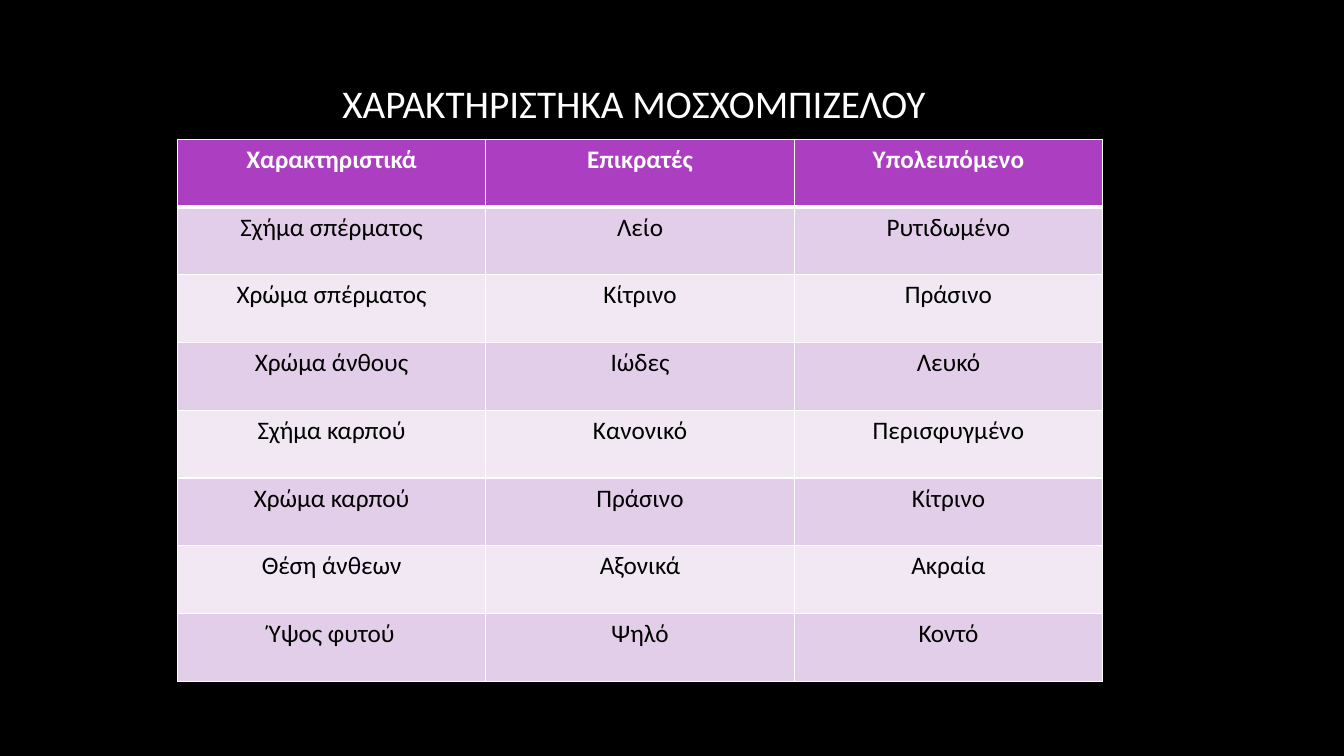
import pptx
import pptx.util
import pptx.dml.color
import pptx.enum.text
import pptx.oxml
import pptx.oxml.ns

Cm, Pt = pptx.util.Cm, pptx.util.Pt

TITLE = "ΧΑΡΑΚΤΗΡΙΣΤΗΚΑ ΜΟΣΧΟΜΠΙΖΕΛΟΥ"
TRAITS = [
    ("Χαρακτηριστικά", "Επικρατές", "Υπολειπόμενο"),
    ("Σχήμα σπέρματος", "Λείο", "Ρυτιδωμένο"),
    ("Χρώμα σπέρματος", "Κίτρινο", "Πράσινο"),
    ("Χρώμα άνθους", "Ιώδες", "Λευκό"),
    ("Σχήμα καρπού", "Κανονικό", "Περισφυγμένο"),
    ("Χρώμα καρπού", "Πράσινο", "Κίτρινο"),
    ("Θέση άνθεων", "Αξονικά", "Ακραία"),
    ("Ύψος φυτού", "Ψηλό", "Κοντό"),
]
COLORS = {
    "background": "000000",
    "light": "FFFFFF",
    "dark": "000000",
    "header": "AC3EC1",
    "odd": "E3CEE9",
    "even": "F1E8F4",
}
TITLE_BOX = {"left": Cm(1.9), "top": Cm(1.7), "width": Cm(28.15), "height": Cm(1.8)}
TABLE_BOX = {"left": Cm(4.47), "top": Cm(3.51), "width": Cm(23.32), "height": Cm(13.66)}
TITLE_FONT = {"name": "Calibri", "size": Pt(28), "bold": False}
HEADER_FONT = {"name": "Calibri", "size": Pt(18), "bold": True}
BODY_FONT = {"name": "Calibri", "size": Pt(18), "bold": False}


def rgb(role):
    return pptx.dml.color.RGBColor.from_string(COLORS[role])


def apply(target, values):
    for attribute, value in values.items():
        setattr(target, attribute, value)


def write(frame, text, font, color):
    frame.text = text
    paragraph = frame.paragraphs[0]
    paragraph.alignment = pptx.enum.text.PP_ALIGN.CENTER
    run_font = paragraph.runs[0].font
    apply(run_font, font)
    run_font.color.rgb = rgb(color)


def set_borders(cell, widths):
    """Draw light lines on the sides of a cell, given as {side: points}."""
    properties = cell._tc.get_or_add_tcPr()
    for position, (side, points) in enumerate(widths.items()):
        line = pptx.oxml.parse_xml(
            f'<a:ln{side} {pptx.oxml.ns.nsdecls("a")} w="{Pt(points)}"><a:solidFill>'
            f'<a:srgbClr val="{COLORS["light"]}"/></a:solidFill></a:ln{side}>')
        properties.insert(position, line)


def add_traits(slide):
    table = slide.shapes.add_table(len(TRAITS), len(TRAITS[0]), **TABLE_BOX).table
    for row in table.rows:
        row.height = TABLE_BOX["height"] // len(TRAITS)
    for r, trait in enumerate(TRAITS):
        is_header = r == 0
        fill = "header" if is_header else "odd" if r % 2 else "even"
        widths = {"L": 1, "R": 1, "T": 3 if r == 1 else 1, "B": 3 if is_header else 1}
        for c, text in enumerate(trait):
            cell = table.cell(r, c)
            cell.fill.solid()
            cell.fill.fore_color.rgb = rgb(fill)
            set_borders(cell, widths)
            write(cell.text_frame, text, HEADER_FONT if is_header else BODY_FONT,
                  "light" if is_header else "dark")


def main():
    deck = pptx.Presentation()
    apply(deck, {"slide_width": Cm(33.87), "slide_height": Cm(19.05)})
    slide = deck.slides.add_slide(deck.slide_layouts[5])
    slide.background.fill.solid()
    slide.background.fill.fore_color.rgb = rgb("background")

    title = slide.shapes.title
    apply(title, TITLE_BOX)
    title.text_frame.vertical_anchor = pptx.enum.text.MSO_ANCHOR.MIDDLE
    write(title.text_frame, TITLE, TITLE_FONT, "light")

    add_traits(slide)
    deck.save("out.pptx")


if __name__ == "__main__":
    main()
